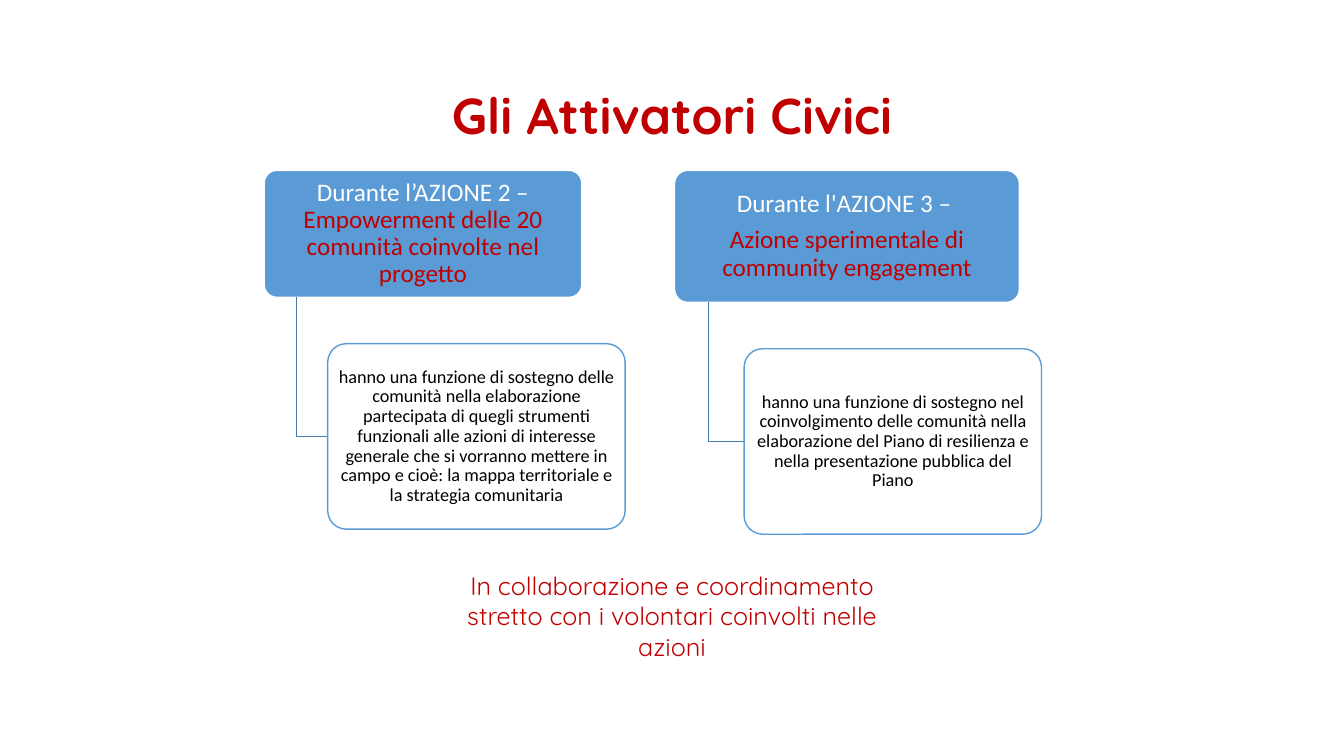
from dataclasses import dataclass

from lxml import etree
from pptx import Presentation
from pptx import util as u
from pptx.dml.color import RGBColor
from pptx.enum import shapes, text
from pptx.oxml import ns
from pptx.shapes.autoshape import Shape
from pptx.slide import Slide
from pptx.text.text import TextFrame

PX = 9144
WHITE = RGBColor(0xFF, 0xFF, 0xFF)
BLACK = RGBColor(0x00, 0x00, 0x00)
RED = RGBColor(0xC0, 0x00, 0x00)
BLUE = RGBColor(0x5B, 0x9B, 0xD5)
DARK_BLUE = RGBColor(0x49, 0x7C, 0xAB)
BODY_FONT = "Calibri"
TITLE_FONT = "Quicksand"
TOP = 169
ROLE_GAP = 46
ROLE_WIDTH = 295
ROLE_HEIGHT = 184


@dataclass(frozen=True)
class Box:
    left: int
    top: int
    width: int
    height: int

    def emu(self) -> tuple[int, int, int, int]:
        return self.left * PX, self.top * PX, self.width * PX, self.height * PX


@dataclass(frozen=True)
class Span:
    wording: str
    color: RGBColor


@dataclass(frozen=True)
class Style:
    font: str
    size: int
    bold: bool = False
    line_spacing: float = 0.9
    space_between: float = 0


@dataclass(frozen=True)
class Action:
    header: Box
    heading: list[list[Span]]
    role: str
    role_left: int
    stem: int


ACTIONS = [
    Action(
        Box(262, TOP, 315, 126),
        [[Span("Durante l’AZIONE 2 – ", WHITE),
          Span("Empowerment delle 20 comunità coinvolte nel progetto", RED)]],
        "hanno una funzione di sostegno delle comunità nella elaborazione "
        "partecipata di quegli strumenti funzionali alle azioni di interesse "
        "generale che si vorranno mettere in campo e cioè: la mappa "
        "territoriale e la strategia comunitaria",
        325,
        294,
    ),
    Action(
        Box(669, TOP, 342, 131),
        [[Span("Durante l'AZIONE 3 – ", WHITE)],
         [Span("Azione sperimentale di community engagement", RED)]],
        "hanno una funzione di sostegno nel coinvolgimento delle comunità "
        "nella elaborazione del Piano di resilienza e nella presentazione "
        "pubblica del Piano",
        738,
        703,
    ),
]


def write(frame: TextFrame, paragraphs: list[list[Span]], style: Style) -> None:
    frame.word_wrap = True
    for index, spans in enumerate(paragraphs):
        paragraph = frame.paragraphs[0] if index == 0 else frame.add_paragraph()
        paragraph.alignment = text.PP_ALIGN.CENTER
        paragraph.line_spacing = style.line_spacing
        if index < len(paragraphs) - 1:
            paragraph.space_after = u.Pt(style.space_between)
        for span in spans:
            run = paragraph.add_run()
            run.text = span.wording
            run.font.name = style.font
            run.font.size = u.Pt(style.size)
            run.font.bold = style.bold
            run.font.color.rgb = span.color


def add_label(slide: Slide, box: Box, wording: str, style: Style) -> TextFrame:
    frame = slide.shapes.add_textbox(*box.emu()).text_frame
    write(frame, [[Span(wording, RED)]], style)
    return frame


def add_card(slide: Slide, box: Box, fill: RGBColor, line: RGBColor,
             inset: tuple[int, int]) -> Shape:
    card = slide.shapes.add_shape(
        shapes.MSO_SHAPE.ROUNDED_RECTANGLE, *box.emu())
    card.adjustments[0] = 0.1
    card.shadow.inherit = False
    card.fill.solid()
    card.fill.fore_color.rgb = fill
    card.line.color.rgb = line
    card.line.width = u.Pt(1)
    frame = card.text_frame
    frame.vertical_anchor = text.MSO_ANCHOR.MIDDLE
    frame.margin_left = frame.margin_right = inset[0] * PX
    frame.margin_top = frame.margin_bottom = inset[1] * PX
    return card


def set_opacity(shape: Shape, percent: int) -> None:
    color = shape.fill._xPr.find(ns.qn("a:solidFill"))[0]
    etree.SubElement(color, ns.qn("a:alpha")).set("val", str(percent * 1000))


def add_elbow(slide: Slide, points: list[tuple[int, int]]) -> None:
    builder = slide.shapes.build_freeform(*points[0], scale=float(PX))
    builder.add_line_segments(points[1:], close=False)
    elbow = builder.convert_to_shape()
    elbow.shadow.inherit = False
    elbow.fill.background()
    elbow.line.color.rgb = DARK_BLUE
    elbow.line.width = u.Pt(1)


def add_action(slide: Slide, action: Action) -> None:
    header = add_card(slide, action.header, BLUE, WHITE, (4, 3))
    write(header.text_frame, action.heading,
          Style(BODY_FONT, 18, space_between=6.3))
    bottom = action.header.top + action.header.height
    role_box = Box(action.role_left, bottom + ROLE_GAP, ROLE_WIDTH, ROLE_HEIGHT)
    middle = role_box.top + ROLE_HEIGHT // 2
    add_elbow(slide, [(action.stem, bottom), (action.stem, middle),
                      (action.role_left, middle)])
    role = add_card(slide, role_box, WHITE, BLUE, (3, 2))
    set_opacity(role, 90)
    write(role.text_frame, [[Span(action.role, BLACK)]], Style(BODY_FONT, 13))


def main() -> None:
    presentation = Presentation()
    presentation.slide_width = 1333 * PX
    presentation.slide_height = 750 * PX
    slide = presentation.slides.add_slide(presentation.slide_layouts[6])
    title = add_label(slide, Box(180, 80, 973, 74), "Gli Attivatori Civici",
                      Style(TITLE_FONT, 36, bold=True))
    title.vertical_anchor = text.MSO_ANCHOR.MIDDLE
    for action in ACTIONS:
        add_action(slide, action)
    closing = add_label(
        slide, Box(418, 561, 497, 101),
        "In collaborazione e coordinamento stretto con i volontari coinvolti "
        "nelle azioni",
        Style(TITLE_FONT, 18, line_spacing=1.0))
    closing.auto_size = text.MSO_AUTO_SIZE.SHAPE_TO_FIT_TEXT
    presentation.save("out.pptx")


if __name__ == "__main__":
    main()
